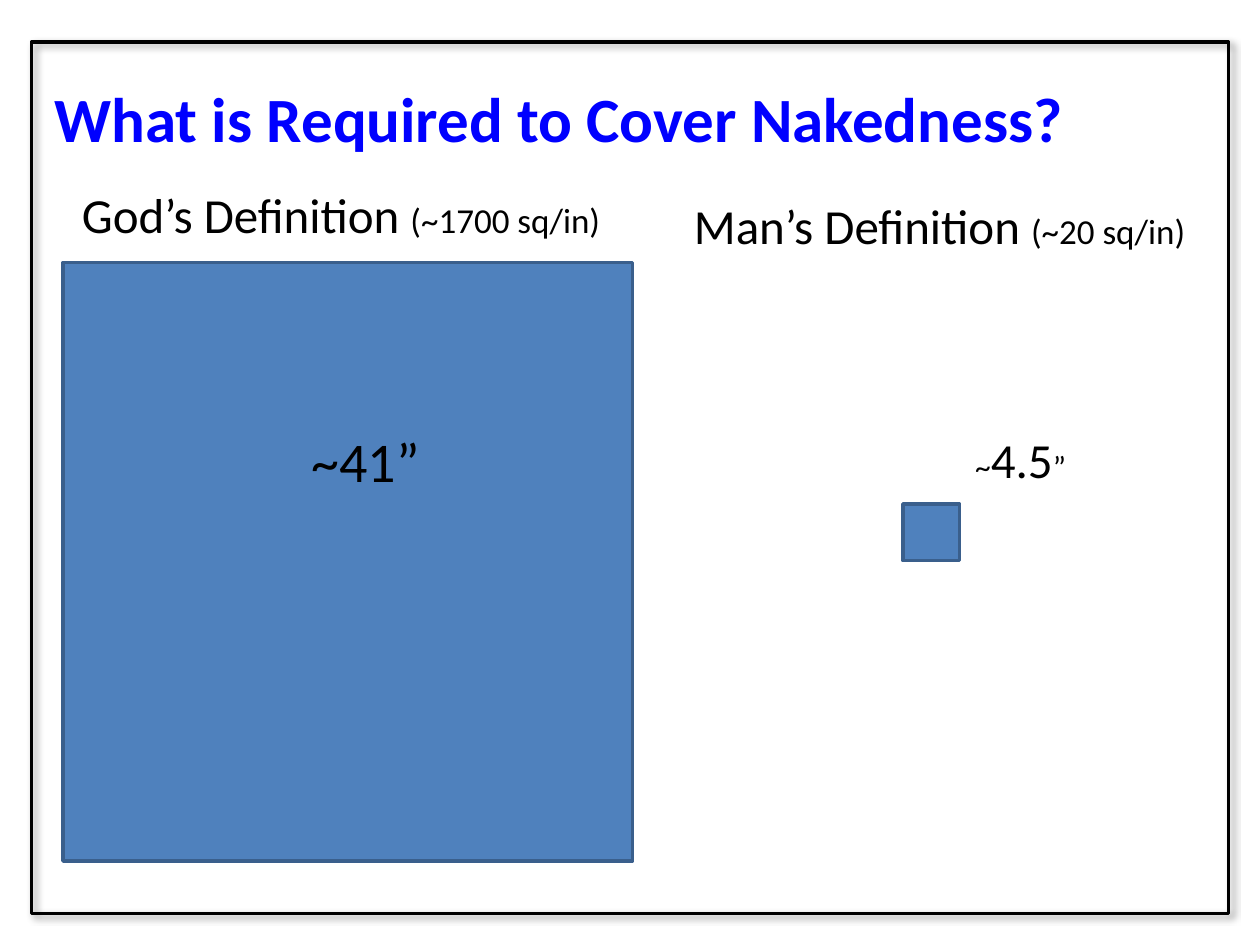
"""Build a slide comparing two definitions of nakedness as squares drawn to scale."""
from dataclasses import dataclass

from lxml import etree
from pptx import Presentation
from pptx.dml.color import RGBColor
from pptx.enum.shapes import MSO_SHAPE
from pptx.enum.text import MSO_ANCHOR, MSO_AUTO_SIZE, PP_ALIGN
from pptx.oxml.ns import qn
from pptx.util import Emu, Inches, Pt

RECTANGLE = MSO_SHAPE.RECTANGLE
LEFT, CENTER = PP_ALIGN.LEFT, PP_ALIGN.CENTER
TOP = MSO_ANCHOR.TOP
FIT_SHAPE = MSO_AUTO_SIZE.SHAPE_TO_FIT_TEXT
TITLE_ONLY = 5
COLUMNS, ROWS = 120, 90
SLIDE_WIDTH, SLIDE_HEIGHT = Inches(10), Inches(7.5)


@dataclass(frozen=True)
class Theme:
    font: str = "Calibri"
    ink: RGBColor = RGBColor(0x00, 0x00, 0x00)
    title: RGBColor = RGBColor(0x00, 0x00, 0xFF)
    fill: RGBColor = RGBColor(0x4F, 0x81, 0xBD)
    outline: RGBColor = RGBColor(0x3A, 0x5F, 0x8C)
    line_width: int = 2
    title_size: int = 36
    large: int = 32
    heading: int = 28
    detail: int = 20
    small: int = 18


@dataclass(frozen=True)
class Area:
    column: float
    row: float
    columns: float
    rows: float

    def bounds(self) -> tuple[Emu, Emu, Emu, Emu]:
        """Return left, top, width and height of this grid area."""
        cell_width, cell_height = SLIDE_WIDTH / COLUMNS, SLIDE_HEIGHT / ROWS
        return (Emu(round(self.column * cell_width)), Emu(round(self.row * cell_height)),
                Emu(round(self.columns * cell_width)), Emu(round(self.rows * cell_height)))


@dataclass(frozen=True)
class Span:
    text: str
    size: int


@dataclass(frozen=True)
class Label:
    area: Area
    spans: tuple[Span, ...]
    alignment: PP_ALIGN = LEFT
    wrap: bool = True


THEME = Theme()
FRAME = Area(3, 4, 114, 83)
TITLE = Area(4, 7, 105, 8.5)
SQUARES = (Area(6, 25, 54.25, 57), Area(86, 48, 5.4, 5.4))
LABELS = (
    Label(Area(6, 17, 53, 6.85),
          (Span("God’s Definition ", THEME.heading), Span("(~1700 sq/in)", THEME.detail)), CENTER),
    Label(Area(62, 18, 55, 6.85),
          (Span("Man’s Definition ", THEME.heading), Span("(~20 sq/in)", THEME.detail)), CENTER),
    Label(Area(28.5, 40, 12.85, 7.7), (Span("~41”", THEME.large),), wrap=False),
    Label(Area(91.7, 40.3, 11.15, 6.85),
          (Span("~", THEME.small), Span("4.5", THEME.heading), Span("”", THEME.small)), wrap=False),
)


def add_rectangle(page, area: Area, outline: RGBColor):
    """Add an unfilled, outlined rectangle without a shadow."""
    box = page.shapes.add_shape(RECTANGLE, *area.bounds())
    box.shadow.inherit = False
    box.fill.background()
    box.line.color.rgb = outline
    box.line.width = Pt(THEME.line_width)
    return box


def add_square(page, area: Area) -> None:
    """Add one filled area of the comparison."""
    box = add_rectangle(page, area, THEME.outline)
    box.fill.solid()
    box.fill.fore_color.rgb = THEME.fill


def add_frame(page) -> None:
    """Add the page frame with its soft diagonal shadow."""
    frame = add_rectangle(page, FRAME, THEME.ink)
    effects = frame.element.spPr.find(qn("a:effectLst"))
    shadow = etree.SubElement(effects, qn("a:outerShdw"), blurRad=str(Pt(4)),
                              dist=str(Pt(3)), dir=str(45 * 60000), algn="tl", rotWithShape="0")
    color = etree.SubElement(shadow, qn("a:srgbClr"), val=str(THEME.ink))
    etree.SubElement(color, qn("a:alpha"), val="40000")


def style_span(span, size: int, color: RGBColor, bold: bool = False) -> None:
    """Apply the theme font to a run."""
    span.font.name = THEME.font
    span.font.size = Pt(size)
    span.font.color.rgb = color
    span.font.bold = bold


def set_title(page) -> None:
    """Place and format the title placeholder."""
    title = page.shapes.title
    title.left, title.top, title.width, title.height = TITLE.bounds()
    frame = title.text_frame
    frame.text = "What is Required to Cover Nakedness?"
    frame.vertical_anchor = TOP
    frame.auto_size = FIT_SHAPE
    para = frame.paragraphs[0]
    para.alignment = LEFT
    style_span(para.runs[0], THEME.title_size, THEME.title, bold=True)


def add_label(page, label: Label) -> None:
    """Add a text box whose spans have their own sizes."""
    frame = page.shapes.add_textbox(*label.area.bounds()).text_frame
    frame.word_wrap = label.wrap
    frame.auto_size = FIT_SHAPE
    para = frame.paragraphs[0]
    para.alignment = label.alignment
    for part in label.spans:
        span = para.add_run()
        span.text = part.text
        style_span(span, part.size, THEME.ink)


def main() -> None:
    """Build and save the deck."""
    deck = Presentation()
    deck.slide_width, deck.slide_height = SLIDE_WIDTH, SLIDE_HEIGHT
    page = deck.slides.add_slide(deck.slide_layouts[TITLE_ONLY])
    add_frame(page)
    for area in SQUARES:
        add_square(page, area)
    set_title(page)
    for label in LABELS:
        add_label(page, label)
    deck.save("out.pptx")


if __name__ == "__main__":
    main()
